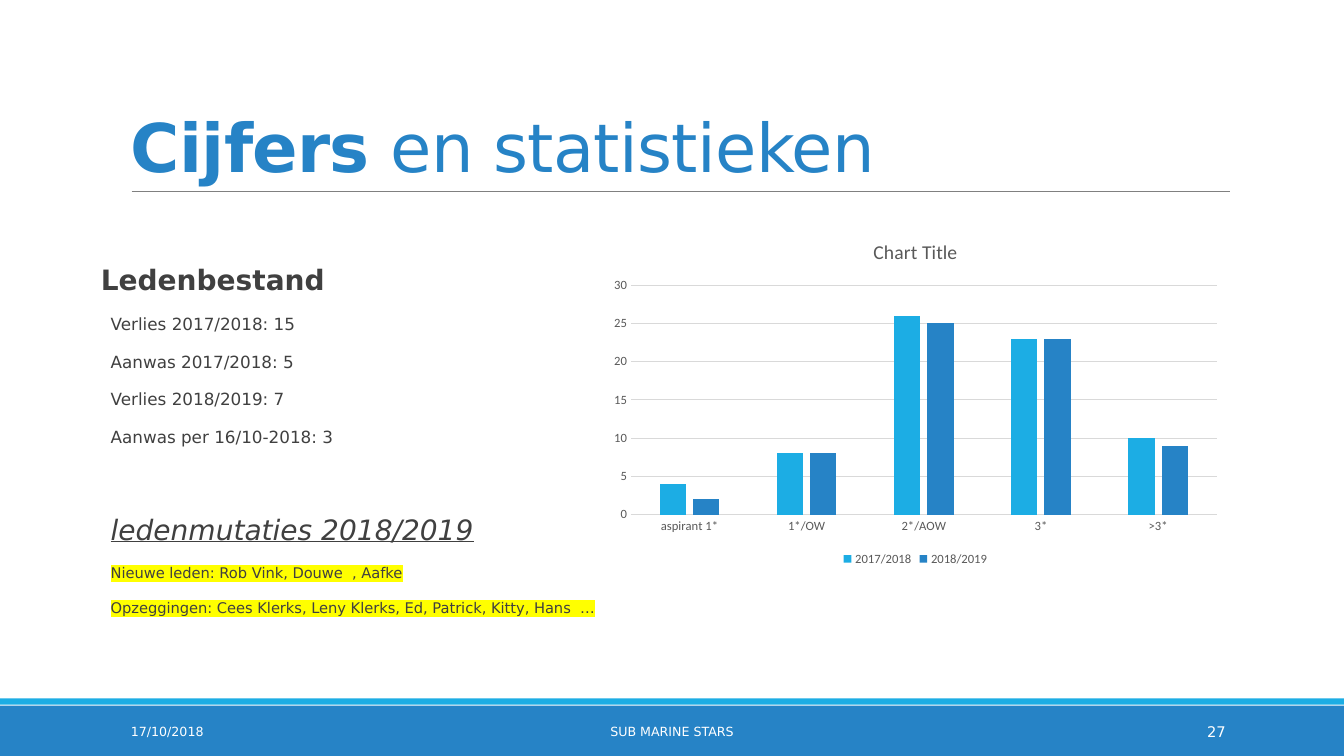
import pptx
import pptx.chart.data
import pptx.dml.color
import pptx.enum.chart
import pptx.enum.shapes
import pptx.enum.text
import pptx.oxml
import pptx.oxml.ns
import pptx.util
from pptx.util import Cm, Pt

BLUE, CYAN, DARK, WHITE = "2683C6", "1CADE4", "404040", "FFFFFF"
GREY, PALE, RULE, YELLOW = "595959", "D9D9D9", "808080", "FFFF00"
ALIGN = pptx.enum.text.PP_ALIGN
ANCHOR = pptx.enum.text.MSO_ANCHOR


def colour(value):
    return pptx.dml.color.RGBColor.from_string(value)


def style_font(font, size, value, name="DejaVu Sans"):
    font.size = Pt(size)
    font.name = name
    font.color.rgb = colour(value)


def add_bar(page, top, height, value):
    bar = page.shapes.add_shape(
        pptx.enum.shapes.MSO_SHAPE.RECTANGLE, 0, Cm(top), Cm(33.87), Cm(height))
    bar.shadow.inherit = False
    bar.fill.solid()
    bar.fill.fore_color.rgb = colour(value)
    bar.line.fill.background()


def add_rule(page, left, right, top):
    rule = page.shapes.add_connector(
        pptx.enum.shapes.MSO_CONNECTOR.STRAIGHT, Cm(left), Cm(top), Cm(right), Cm(top))
    rule.line.color.rgb = colour(RULE)
    rule.line.width = Pt(0.5)
    rule._element.spPr.append(pptx.oxml.parse_xml(
        "<a:effectLst %s/>" % pptx.oxml.ns.nsdecls("a")))


def add_box(page, left, top, width, height, anchor):
    box = page.shapes.add_textbox(Cm(left), Cm(top), Cm(width), Cm(height))
    frame = box.text_frame
    frame.word_wrap = True
    frame.vertical_anchor = anchor
    return frame


def add_title(page, strong, rest):
    frame = add_box(page, 3.05, 0.79, 27.94, 4.04, ANCHOR.BOTTOM)
    para = frame.paragraphs[0]
    para.line_spacing = 0.85
    style_font(para.font, 48, BLUE)
    for text, bold in ((strong, True), (rest, False)):
        span = para.add_run()
        span.text = text
        span.font.bold = bold
        span._r.get_or_add_rPr().set("spc", "-50")


def add_body_line(para, text, size, before=12, indent=0.25, marked=False):
    para.line_spacing = 0.9
    para.space_before = Pt(before)
    para.space_after = Pt(2)
    para._p.get_or_add_pPr().set("marL", str(Cm(indent)))
    style_font(para.font, size, DARK)
    span = para.add_run()
    span.text = text
    if marked:
        span._r.get_or_add_rPr().append(pptx.oxml.parse_xml(
            '<a:highlight %s><a:srgbClr val="%s"/></a:highlight>'
            % (pptx.oxml.ns.nsdecls("a"), YELLOW)))


def add_body(page):
    frame = add_box(page, 2.54, 6.58, 28.78, 11, ANCHOR.TOP)
    frame.margin_left = frame.margin_right = 0

    heading = frame.paragraphs[0]
    add_body_line(heading, "Ledenbestand", 20, before=0, indent=0)
    heading.font.bold = True
    for text in ("Verlies 2017/2018: 15", "Aanwas 2017/2018: 5",
                 "Verlies 2018/2019: 7", "Aanwas per 16/10-2018: 3"):
        add_body_line(frame.add_paragraph(), text, 12)

    changes = frame.add_paragraph()
    add_body_line(changes, "ledenmutaties 2018/2019", 20, before=47)
    changes.font.italic = True
    changes.font.underline = True
    for text in ("Nieuwe leden: Rob Vink, Douwe  , Aafke",
                 "Opzeggingen: Cees Klerks, Leny Klerks, Ed, Patrick, Kitty, Hans  …"):
        add_body_line(frame.add_paragraph(), text, 10.5, marked=True)


def add_footer(page, text, left, width, size, align):
    frame = add_box(page, left, 17.94, width, 1.01, ANCHOR.MIDDLE)
    para = frame.paragraphs[0]
    para.text = text
    para.alignment = align
    style_font(para.font, size, WHITE)


def add_members_chart(page):
    data = pptx.chart.data.CategoryChartData()
    data.categories = ["aspirant 1*", "1*/OW", "2*/AOW", "3*", ">3*"]
    data.add_series("2017/2018", (4, 8, 26, 23, 10))
    data.add_series("2018/2019", (2, 8, 25, 23, 9))
    chart = page.shapes.add_chart(
        pptx.enum.chart.XL_CHART_TYPE.COLUMN_CLUSTERED,
        Cm(15.16), Cm(5.61), Cm(15.82), Cm(8.76), data).chart
    style_font(chart.font, 10, "000000", "Calibri")

    # Title and legend
    chart.has_title = True
    title = chart.chart_title.text_frame.paragraphs[0]
    title.text = "Chart Title"
    style_font(title.font, 14, GREY, "Calibri")
    title.font.bold = False
    chart.has_legend = True
    chart.legend.position = pptx.enum.chart.XL_LEGEND_POSITION.BOTTOM
    chart.legend.include_in_layout = False
    style_font(chart.legend.font, 9, GREY, "Calibri")

    # Columns
    plot = chart.plots[0]
    plot.vary_by_categories = False
    plot.gap_width = 219
    plot.overlap = -27
    for series, value in zip(plot.series, (CYAN, BLUE)):
        series.format.fill.solid()
        series.format.fill.fore_color.rgb = colour(value)

    # Axes
    for axis in (chart.category_axis, chart.value_axis):
        axis.major_tick_mark = pptx.enum.chart.XL_TICK_MARK.NONE
        axis.minor_tick_mark = pptx.enum.chart.XL_TICK_MARK.NONE
        style_font(axis.tick_labels.font, 9, GREY, "Calibri")
    chart.value_axis.minimum_scale = 0
    chart.value_axis.maximum_scale = 30
    chart.value_axis.major_unit = 5
    chart.value_axis.has_major_gridlines = True
    chart.value_axis.format.line.fill.background()
    for part in (chart.category_axis, chart.value_axis.major_gridlines):
        part.format.line.color.rgb = colour(PALE)
        part.format.line.width = Pt(0.75)


def main():
    deck = pptx.Presentation()
    deck.slide_width = Cm(33.87)
    deck.slide_height = Cm(19.05)
    page = deck.slides.add_slide(deck.slide_layouts[6])

    # Footer bands and title rule
    add_bar(page, 17.78, 1.27, BLUE)
    add_bar(page, 17.6, 0.16, CYAN)
    add_rule(page, 3.32, 31, 4.82)

    # Content
    add_title(page, "Cijfers", " en statistieken")
    add_body(page)
    add_members_chart(page)

    # Footer texts
    add_footer(page, "17/10/2018", 3.05, 6.86, 9, ALIGN.LEFT)
    add_footer(page, "SUB MARINE STARS", 10.24, 13.39, 9, ALIGN.CENTER)
    add_footer(page, "27", 27.51, 3.63, 10.5, ALIGN.RIGHT)

    deck.save("out.pptx")


if __name__ == "__main__":
    main()
